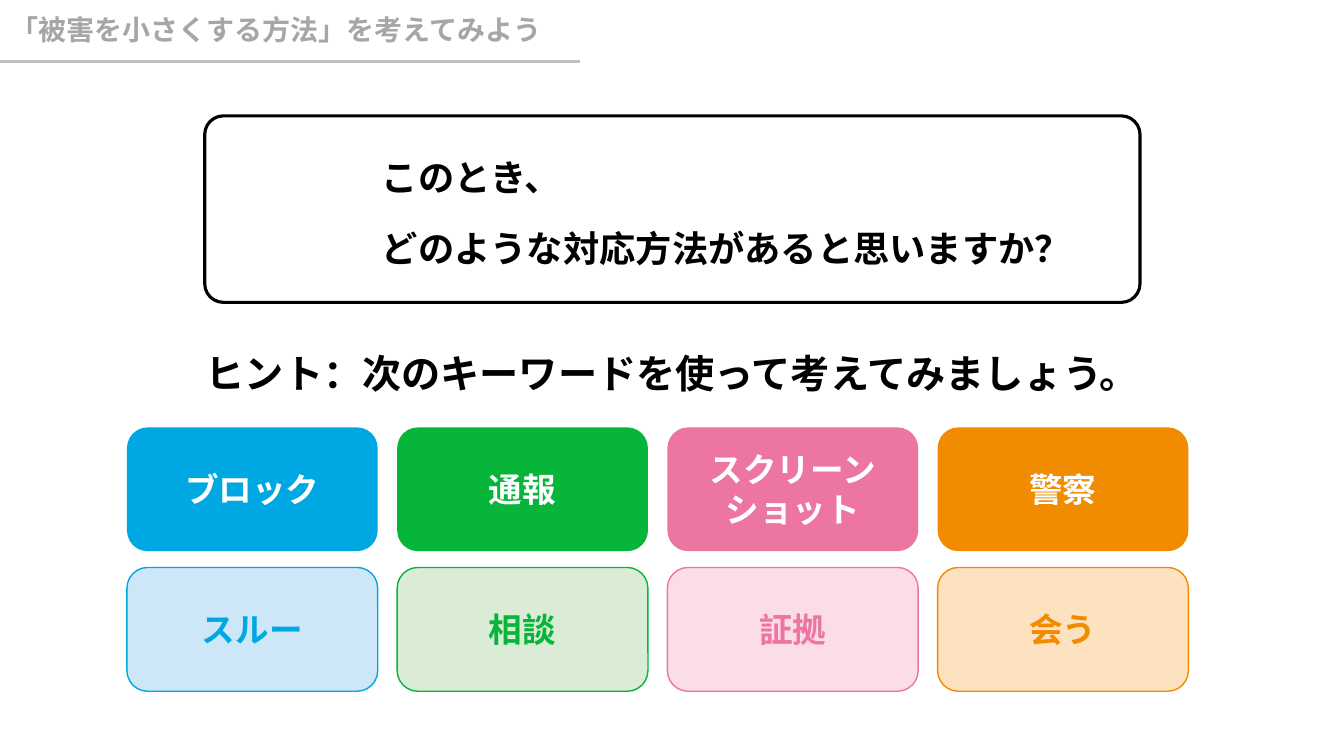
from lxml.etree import SubElement
from pptx import Presentation
from pptx.dml.color import RGBColor
from pptx.enum.shapes import MSO_CONNECTOR as Connector, MSO_SHAPE as Shape
from pptx.enum.text import MSO_ANCHOR as Anchor, MSO_AUTO_SIZE as AutoSize, PP_ALIGN as Align
from pptx.oxml.ns import qn
from pptx.util import Cm, Pt

JAPANESE_FONT = "Noto Sans CJK JP"
KEYWORD_ROWS = [
    [
        (["ブロック"], "00A8E3", None, "FFFFFF"),
        (["通報"], "07B53B", None, "FFFFFF"),
        (["スクリーン", "ショット"], "ED75A2", None, "FFFFFF"),
        (["警察"], "F18C00", None, "FFFFFF"),
    ],
    [
        (["スルー"], "CEE7F8", "00A8E3", "00A8E3"),
        (["相談"], "DAECD5", "07B53B", "07B53B"),
        (["証拠"], "FADDE6", "ED75A2", "ED75A2"),
        (["会う"], "FDE2C0", "F18B00", "F18B00"),
    ],
]


def color(value):
    """Turn a hex string into a colour."""
    return RGBColor.from_string(value)


class SlideBuilder:
    """Hold the style and the current slide."""

    def __init__(self, slide):
        """Start building on the given slide."""
        self.slide = slide

    def add_lines(self, frame, lines, size, text_color, font=JAPANESE_FONT,
                  align=Align.LEFT, spacing=1.0, before=0):
        """Put bold, unbulleted paragraphs into a text frame."""
        frame.word_wrap = True
        frame.auto_size = AutoSize.NONE
        for index, line in enumerate(lines):
            paragraph = frame.add_paragraph() if index else frame.paragraphs[0]
            paragraph.alignment = align
            paragraph.line_spacing = spacing
            paragraph.space_before = Pt(before)
            properties = paragraph._p.get_or_add_pPr()
            properties.set("marL", "0")
            properties.set("indent", "0")
            SubElement(properties, qn("a:buNone"))
            run = paragraph.add_run()
            run.text = line
            run.font.name = font
            run.font.size = Pt(size)
            run.font.bold = True
            run.font.color.rgb = color(text_color)
            east_asian = SubElement(run.font._element, qn("a:ea"))
            east_asian.set("typeface", JAPANESE_FONT)

    def placeholder(self, number, box, lines, size, text_color, anchor=Anchor.MIDDLE,
                    bottom_inset=0.13, **style):
        """Move a placeholder to the front and fill it."""
        shape = self.slide.placeholders[number]
        shape.left, shape.top, shape.width, shape.height = map(Cm, box)
        shape._element.getparent().append(shape._element)
        frame = shape.text_frame
        frame.vertical_anchor = anchor
        frame.margin_bottom = Cm(bottom_inset)
        self.add_lines(frame, lines, size, text_color, **style)

    def rule(self, left, right, y, line_color, width):
        """Draw a horizontal line."""
        line = self.slide.shapes.add_connector(
            Connector.STRAIGHT, Cm(left), Cm(y), Cm(right), Cm(y))
        line.line.color.rgb = color(line_color)
        line.line.width = Pt(width)
        SubElement(line._element.spPr, qn("a:effectLst"))

    def rounded_box(self, box, fill, line_color=None, width=1, radius=0.1667):
        """Draw a rounded rectangle and return it."""
        shape = self.slide.shapes.add_shape(Shape.ROUNDED_RECTANGLE, *map(Cm, box))
        shape.shadow.inherit = False
        shape.adjustments[0] = radius
        shape.fill.solid()
        shape.fill.fore_color.rgb = color(fill)
        if line_color:
            shape.line.color.rgb = color(line_color)
            shape.line.width = Pt(width)
        else:
            shape.line.fill.background()
        return shape

    def keyword(self, box, lines, fill, line_color, text_color):
        """Draw a keyword tile."""
        frame = self.rounded_box(box, fill, line_color).text_frame
        frame.margin_left = frame.margin_right = 0
        frame.margin_top = frame.margin_bottom = 0
        frame.vertical_anchor = Anchor.MIDDLE
        self.add_lines(frame, lines, 24, text_color, align=Align.CENTER)


def main():
    """Build and save the slide."""
    presentation = Presentation()
    presentation.slide_width, presentation.slide_height = Cm(33.87), Cm(19.05)
    builder = SlideBuilder(presentation.slides.add_slide(presentation.slide_layouts[3]))

    builder.rule(0, 14.61, 1.55, "BFBFBF", 1.5)
    builder.rounded_box((5.16, 2.92, 23.57, 4.7), "FFFFFF", "000000", 2.25, 0.1)
    for row, keywords in enumerate(KEYWORD_ROWS):
        for column, keyword in enumerate(keywords):
            box = (3.2 + 6.81 * column, 10.77 + 3.53 * row, 6.32, 3.12)
            builder.keyword(box, *keyword)

    builder.placeholder(0, (0, 0.05, 29.21, 1.5), ["「被害を小さくする方法」を考えてみよう"],
                        20, "A6A6A6", font="Arial", spacing=0.9)
    builder.placeholder(1, (2.34, 8.33, 29.21, 2.08),
                        ["ヒント：次のキーワードを使って考えてみましょう。"], 28, "000000",
                        anchor=Anchor.TOP, font="Arial", align=Align.CENTER,
                        spacing=1.3, before=10)
    builder.placeholder(2, (9.37, 3.45, 18.31, 3.66),
                        ["このとき、", "どのような対応方法があると思いますか？"], 25.9, "000000",
                        bottom_inset=0.3, spacing=1.3, before=10)
    presentation.save("out.pptx")


if __name__ == "__main__":
    main()
